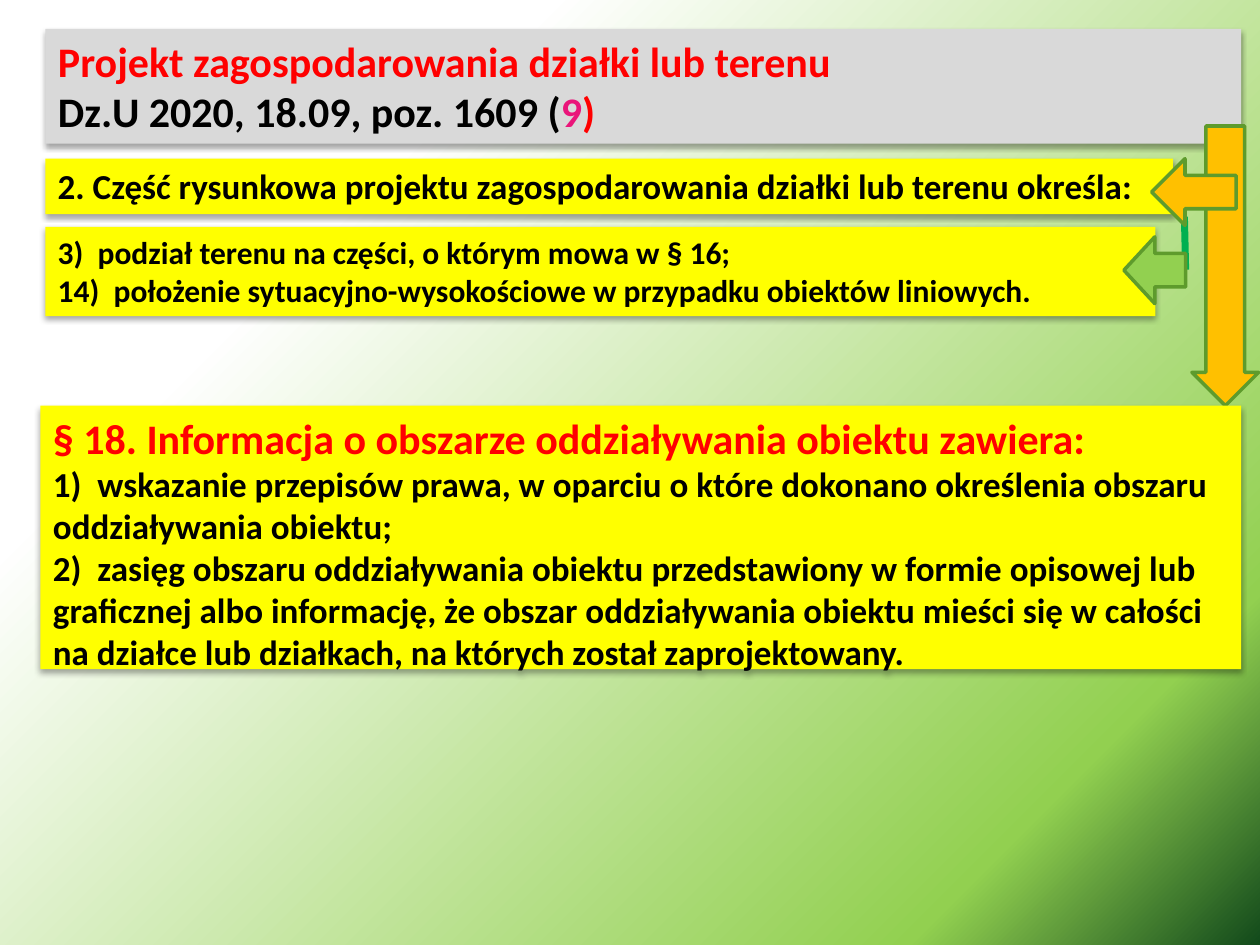
from lxml import etree
from pptx import Presentation
from pptx.dml.color import RGBColor
from pptx.enum.shapes import MSO_CONNECTOR, MSO_SHAPE
from pptx.enum.text import MSO_ANCHOR, MSO_AUTO_SIZE, PP_ALIGN
from pptx.oxml import parse_xml
from pptx.oxml.ns import nsdecls, qn
from pptx.util import Inches, Pt

DOWN_ARROW = MSO_SHAPE.DOWN_ARROW
STRAIGHT = MSO_CONNECTOR.STRAIGHT
TOP = MSO_ANCHOR.TOP
LEFT = PP_ALIGN.LEFT
GROW = MSO_AUTO_SIZE.SHAPE_TO_FIT_TEXT

BLACK = RGBColor(0x00, 0x00, 0x00)
RED = RGBColor(0xFF, 0x00, 0x00)
PINK = RGBColor(0xEA, 0x15, 0x7A)
GREY = RGBColor(0xD9, 0xD9, 0xD9)
YELLOW = RGBColor(0xFF, 0xFF, 0x00)
ORANGE = RGBColor(0xFF, 0xC0, 0x00)
LIME = RGBColor(0x92, 0xD0, 0x50)
GREEN = RGBColor(0x00, 0xB0, 0x50)
OUTLINE = RGBColor(0x5E, 0x9B, 0x2C)
FONT = "Calibri"

# Gradient stops from the bottom right corner: percent, colour
BACKGROUND = [(0, "124A1B"), (16, "92D050"), (75, "FFFFFF")]

# Paragraphs: size, then runs of text and colour
TITLE = [
    (24, [("Projekt zagospodarowania działki lub terenu", RED)]),
    (24, [("Dz.U 2020, 18.09, poz. 1609 (", BLACK), ("9", PINK), (")", RED)]),
]
DRAWING_PART = [
    (20, [("2. Część rysunkowa projektu zagospodarowania działki lub terenu określa:", BLACK)]),
]
DRAWING_ITEMS = [
    (18, [("3)  podział terenu na części, o którym mowa w § 16;", BLACK)]),
    (18, [("14)  położenie sytuacyjno-wysokościowe w przypadku obiektów liniowych.", BLACK)]),
]
IMPACT_AREA = [
    (24, [("§ 18. Informacja o obszarze oddziaływania obiektu zawiera:", RED)]),
    (20, [("1)  wskazanie przepisów prawa, w oparciu o które dokonano określenia "
           "obszaru oddziaływania obiektu;", BLACK)]),
    (20, [("2)  zasięg obszaru oddziaływania obiektu przedstawiony w formie opisowej "
           "lub graficznej albo informację, że obszar oddziaływania obiektu mieści się "
           "w całości na działce lub działkach, na których został zaprojektowany.", BLACK)]),
]


def set_background(page):
    stops = "".join(
        f'<a:gs pos="{percent * 1000}"><a:srgbClr val="{colour}"/></a:gs>'
        for percent, colour in BACKGROUND)
    background = parse_xml(
        f'<p:bg {nsdecls("p", "a")}><p:bgPr><a:gradFill rotWithShape="1">'
        f'<a:gsLst>{stops}</a:gsLst><a:path path="circle">'
        '<a:fillToRect l="100000" t="100000"/></a:path></a:gradFill>'
        '<a:effectLst/></p:bgPr></p:bg>')
    page.element.cSld.insert(0, background)


def add_soft_shadow(box):
    box.shadow.inherit = False
    effects = box.element.spPr.find(qn("a:effectLst"))
    effects.append(parse_xml(
        f'<a:outerShdw {nsdecls("a")} blurRad="{Pt(3.1)}" dist="{Pt(1.8)}" '
        'dir="5400000" rotWithShape="0"><a:srgbClr val="000000">'
        '<a:alpha val="35000"/></a:srgbClr></a:outerShdw>'))


def fill_box(box, place, colour, paragraphs):
    """Place a box or placeholder, colour it and write its text."""
    box.left, box.top, box.width, box.height = map(Inches, place)
    box.fill.solid()
    box.fill.fore_color.rgb = colour
    add_soft_shadow(box)
    frame = box.text_frame
    frame.word_wrap = True
    frame.auto_size = GROW
    frame.vertical_anchor = TOP
    for index, (size, runs) in enumerate(paragraphs):
        para = frame.add_paragraph() if index else frame.paragraphs[0]
        properties = para._p.get_or_add_pPr()
        properties.set("marL", "0")
        properties.set("indent", "0")
        etree.SubElement(properties, qn("a:buNone"))
        para.alignment = LEFT
        para.space_before = Pt(0)
        for text, text_colour in runs:
            span = para.add_run()
            span.text = text
            span.font.name = FONT
            span.font.size = Pt(size)
            span.font.bold = True
            span.font.color.rgb = text_colour


def add_text_box(page, place, colour, paragraphs):
    box = page.shapes.add_textbox(*map(Inches, place))
    fill_box(box, place, colour, paragraphs)


def add_arrow(page, place, colour, rotation=0, shaft=0.5):
    arrow = page.shapes.add_shape(DOWN_ARROW, *map(Inches, place))
    arrow.adjustments[0] = shaft
    arrow.rotation = rotation
    arrow.shadow.inherit = False
    arrow.fill.solid()
    arrow.fill.fore_color.rgb = colour
    arrow.line.color.rgb = OUTLINE
    arrow.line.width = Pt(2)


def add_line(page, start, end):
    line = page.shapes.add_connector(STRAIGHT, *map(Inches, start + end))
    line.line.color.rgb = GREEN
    line.line.width = Pt(4)
    etree.SubElement(line._element.spPr, qn("a:effectLst"))


def main():
    deck = Presentation()
    deck.slide_width, deck.slide_height = Inches(10), Inches(7.5)
    page = deck.slides.add_slide(deck.slide_layouts[1])
    set_background(page)
    title, body = page.placeholders

    fill_box(title, (0.36, 0.23, 9.49, 0.91), GREY, TITLE)
    add_arrow(page, (9.46, 1, 0.53, 2.22), ORANGE, shaft=0.58)
    add_text_box(page, (0.36, 1.26, 8.95, 0.44), YELLOW, DRAWING_PART)
    add_text_box(page, (0.36, 1.8, 8.81, 0.71), YELLOW, DRAWING_ITEMS)
    add_line(page, (9.4, 1.72), (9.41, 2.14))
    add_arrow(page, (8.9, 1.9, 0.53, 0.49), LIME, rotation=90)
    add_arrow(page, (9.21, 1.19, 0.53, 0.67), ORANGE, rotation=90)
    fill_box(body, (0.32, 3.22, 9.53, 2.19), YELLOW, IMPACT_AREA)
    page.shapes.element.append(body.element)  # in front of the arrows

    deck.save("out.pptx")


if __name__ == "__main__":
    main()
